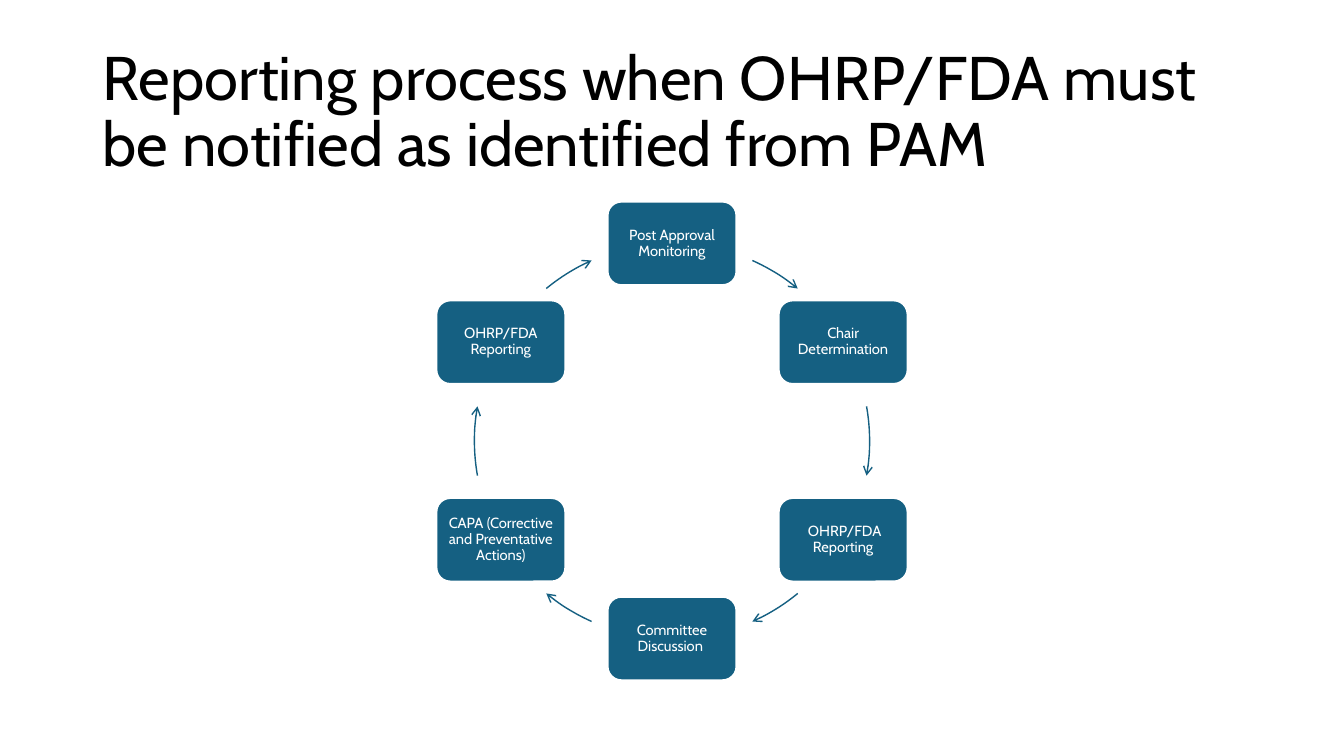
from math import cos, radians, sin

from lxml.etree import SubElement
from pptx import Presentation
from pptx.dml.color import RGBColor
from pptx.enum.shapes import MSO_SHAPE as SHAPE
from pptx.enum.text import MSO_ANCHOR as ANCHOR, PP_ALIGN as ALIGN
from pptx.oxml.ns import qn
from pptx.util import Inches, Pt

FONT = "Cabin"
TEAL, WHITE, BLACK = "156082", "FFFFFF", "000000"
STEPS = [
    "Post Approval Monitoring",
    "Chair Determination",
    " OHRP/FDA Reporting",
    "Committee Discussion ",
    "CAPA (Corrective and Preventative Actions)",
    "OHRP/FDA Reporting",
]
ARC_SPANS = [(24, 39.5), (79.9, 100.1), (140.5, 156),
             (204, 219.5), (259.9, 280.1), (320.5, 336)]
ARC_UNITS_PER_DEGREE = 0.6
STEP_W, STEP_H = 1.28, 0.83


def color(value):
    """Turn a hex string into a colour."""
    return RGBColor.from_string(value)


def write_text(sp, text, size, hex_color, align=ALIGN.LEFT, inset=(0.1, 0.05)):
    """Put one formatted, vertically centred paragraph into a shape."""
    tf = sp.text_frame
    tf.word_wrap = True
    tf.vertical_anchor = ANCHOR.MIDDLE
    tf.margin_left = tf.margin_right = Inches(inset[0])
    tf.margin_top = tf.margin_bottom = Inches(inset[1])
    p = tf.paragraphs[0]
    p.alignment = align
    p.line_spacing = 0.9
    r = p.add_run()
    r.text = text
    r.font.name = FONT
    r.font.size = Pt(size)
    r.font.color.rgb = color(hex_color)


def add_title(s, text, left, top, width, height):
    """Place the slide title in its box."""
    sp = s.shapes.add_textbox(*map(Inches, (left, top, width, height)))
    write_text(sp, text, 44, BLACK)


def add_step(s, text, cx, cy):
    """Draw one rounded step centred on a point."""
    box = (cx - STEP_W / 2, cy - STEP_H / 2, STEP_W, STEP_H)
    sp = s.shapes.add_shape(SHAPE.ROUNDED_RECTANGLE, *map(Inches, box))
    sp.shadow.inherit = False
    sp.fill.solid()
    sp.fill.fore_color.rgb = color(TEAL)
    sp.line.color.rgb = color(WHITE)
    sp.line.width = Pt(1.5)
    write_text(sp, text, 10.5, WHITE, align=ALIGN.CENTER, inset=(0.05, 0.05))


def add_arc_arrow(s, cx, cy, radius, span):
    """Draw an arc arrow between two angles clockwise from the top."""
    box = (cx - radius, cy - radius, 2 * radius, 2 * radius)
    sp = s.shapes.add_shape(SHAPE.ARC, *map(Inches, box))
    for i, angle in enumerate(span):
        sp.adjustments[i] = (angle - 90) % 360 * ARC_UNITS_PER_DEGREE
    sp.shadow.inherit = False
    sp.fill.background()
    sp.line.color.rgb = color(TEAL)
    sp.line.width = Pt(1)
    ln = sp.element.spPr.find(qn("a:ln"))
    SubElement(ln, qn("a:tailEnd"), type="arrow")


def add_cycle(s, left, top, width, height):
    """Lay the steps and arrows clockwise round a circle in the box."""
    cx, cy = left + width / 2, top + height / 2
    radius = (height - STEP_H) / 2
    for i, (text, span) in enumerate(zip(STEPS, ARC_SPANS)):
        a = radians(i * 360 / len(STEPS))
        add_step(s, text, cx + radius * sin(a), cy - radius * cos(a))
        add_arc_arrow(s, cx, cy, radius, span)


def main():
    """Build and save the slide."""
    prs = Presentation()
    prs.slide_width, prs.slide_height = Inches(13.33), Inches(7.5)
    s = prs.slides.add_slide(prs.slide_layouts[6])
    add_title(s, "Reporting process when OHRP/FDA must be notified "
              "as identified from PAM", 0.92, 0.4, 11.5, 1.45)
    add_cycle(s, 4.32, 2, 4.69, 4.75)
    prs.save("out.pptx")


if __name__ == "__main__":
    main()
